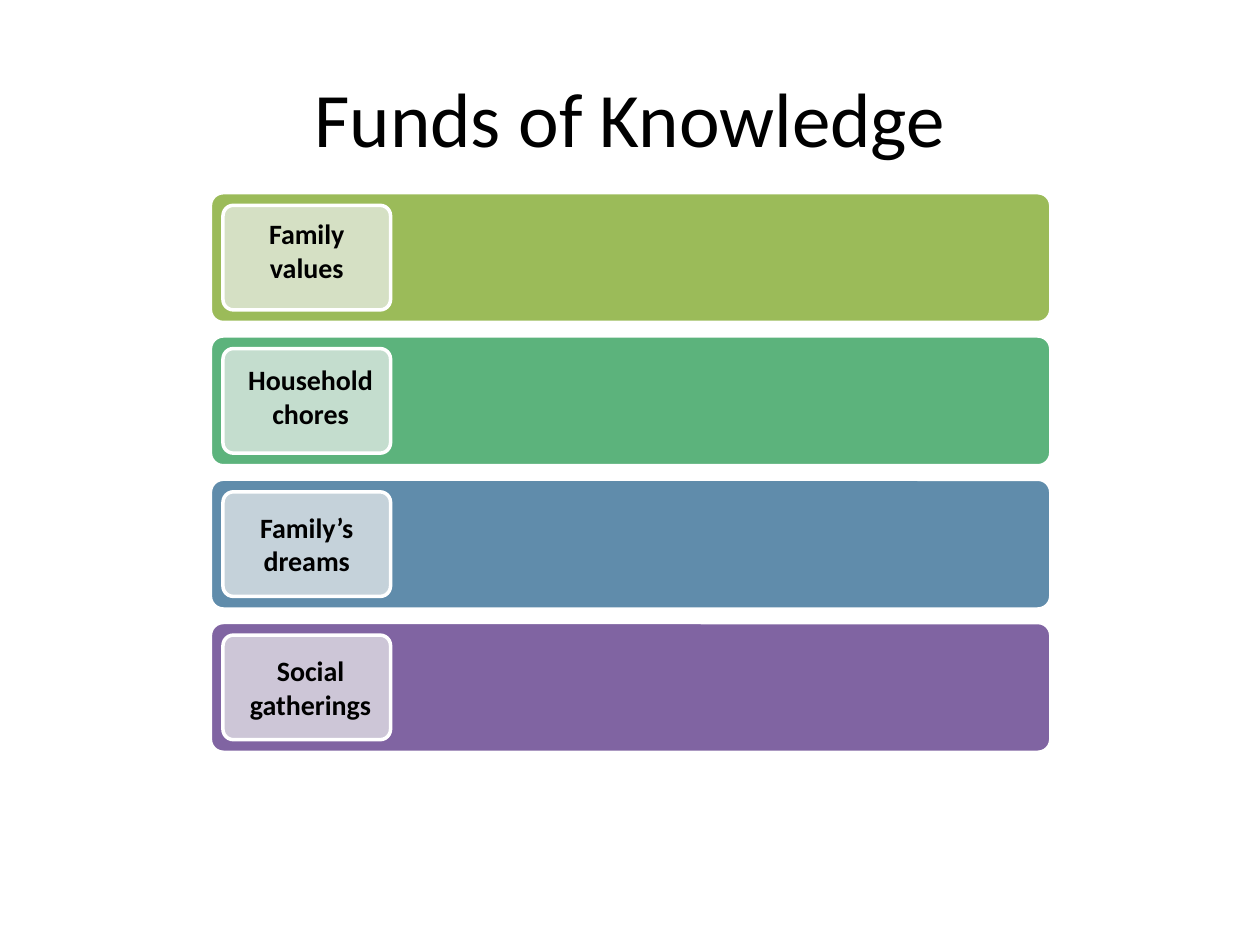
from pptx import Presentation
from pptx.dml.color import RGBColor
from pptx.enum.shapes import MSO_SHAPE as Shape
from pptx.enum.text import MSO_ANCHOR as Anchor, PP_ALIGN as Align
from pptx.util import Inches, Pt

ROWS = [
    ("9BBB59", "D5E0C4", ["Family", "values"], (1.77, 1.67, 1.33, 0.64)),
    ("5CB37C", "C4DDCE", ["Household", "chores"], (1.8, 2.83, 1.33, 0.64)),
    ("608CAB", "C5D2DA", ["Family’s", "dreams"], (1.77, 4, 1.33, 0.94)),
    ("8064A2", "CDC6D7", ["Social gatherings"], (1.81, 5.14, 1.31, 0.94)),
]
FIRST_TOP = 1.53
ROW_STEP = 1.137


def color(value):
    return RGBColor.from_string(value)


def write_text(frame, lines, size, bold=False):
    frame.word_wrap = True
    for index, line in enumerate(lines):
        para = frame.paragraphs[0] if index == 0 else frame.add_paragraph()
        para.alignment = Align.CENTER
        span = para.add_run()
        span.text = line
        span.font.name = "Calibri"
        span.font.size = Pt(size)
        span.font.bold = bold
        span.font.color.rgb = color("000000")


def add_title(page, text):
    title = page.shapes.title
    title.left, title.top = Inches(0.5), Inches(0.3)
    title.width, title.height = Inches(9), Inches(1.25)
    title.text_frame.vertical_anchor = Anchor.MIDDLE
    write_text(title.text_frame, [text], size=44)


def add_panel(page, left, top, width, height, fill):
    panel = page.shapes.add_shape(
        Shape.ROUNDED_RECTANGLE, Inches(left), Inches(top), Inches(width), Inches(height)
    )
    panel.adjustments[0] = 0.1
    panel.shadow.inherit = False
    panel.fill.solid()
    panel.fill.fore_color.rgb = color(fill)
    panel.line.color.rgb = color("FFFFFF")
    panel.line.width = Pt(2)


def add_label(page, lines, place):
    box = page.shapes.add_textbox(*map(Inches, place))
    write_text(box.text_frame, lines, size=16, bold=True)


def main():
    deck = Presentation()
    deck.slide_width, deck.slide_height = Inches(10), Inches(7.5)
    page = deck.slides.add_slide(deck.slide_layouts[5])
    add_title(page, "Funds of Knowledge")
    for index, (bar_fill, tile_fill, _, _) in enumerate(ROWS):
        top = FIRST_TOP + index * ROW_STEP
        add_panel(page, 1.67, top, 6.67, 1.03, bar_fill)
        add_panel(page, 1.77, top + 0.1, 1.33, 0.83, tile_fill)
    for _, _, lines, place in ROWS:
        add_label(page, lines, place)
    deck.save("out.pptx")


if __name__ == "__main__":
    main()
